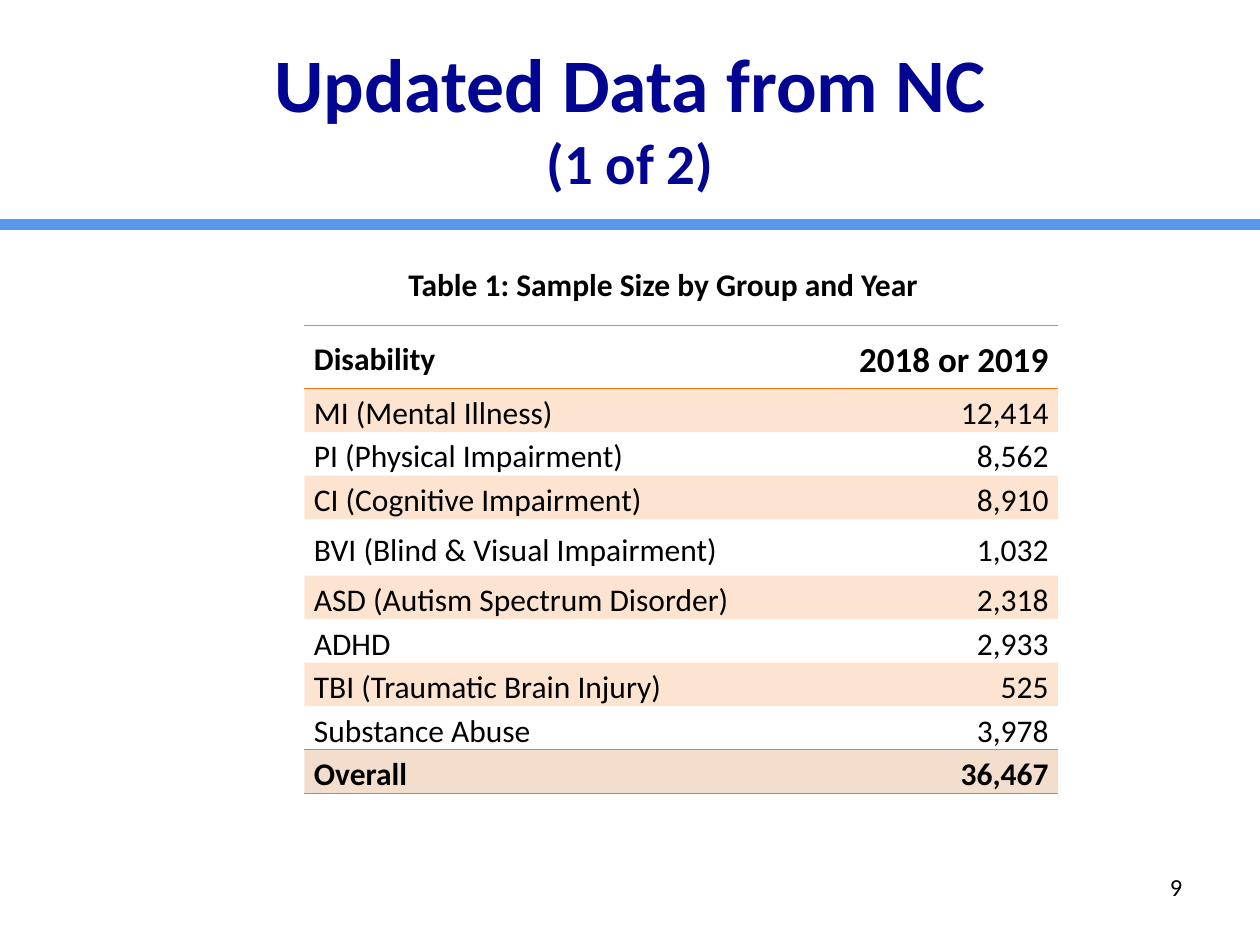
from lxml import etree
from pptx import Presentation
from pptx.dml.color import RGBColor
from pptx.enum.shapes import MSO_CONNECTOR
from pptx.enum.text import MSO_ANCHOR, MSO_AUTO_SIZE, PP_ALIGN
from pptx.oxml.ns import qn
from pptx.util import Pt

LEFT, CENTER, RIGHT = PP_ALIGN.LEFT, PP_ALIGN.CENTER, PP_ALIGN.RIGHT
TOP, MIDDLE = MSO_ANCHOR.TOP, MSO_ANCHOR.MIDDLE
STRAIGHT = MSO_CONNECTOR.STRAIGHT
TITLE_ONLY_LAYOUT = 5
PLAIN_TABLE_STYLE = "{2D5ABB26-0587-4C30-8999-92F81FD0307C}"

WIDTH, HEIGHT = 720, 540
NAVY, BLUE, BLACK, WHITE = "020592", "5799E8", "000000", "FFFFFF"
ORANGE, DARK_ORANGE, GRAY = "F97817", "C75805", "999999"

HEADER = ("Disability", "2018 or 2019")
SAMPLES = [
    ("MI (Mental Illness)", "12,414"),
    ("PI (Physical Impairment)", "8,562"),
    ("CI (Cognitive Impairment)", "8,910"),
    ("BVI (Blind & Visual Impairment)", "1,032"),
    ("ASD (Autism Spectrum Disorder)", "2,318"),
    ("ADHD", "2,933"),
    ("TBI (Traumatic Brain Injury)", "525"),
    ("Substance Abuse", "3,978"),
]
OVERALL = ("Overall", "36,467")
COLUMN_WIDTHS = (309.6, 121)
ROW_HEIGHT = 24.8
TALL_ROWS = {0: 36, 4: 32.4}


def color(value):
    return RGBColor.from_string(value)


def write(paragraph, text, size=18, ink=BLACK, bold=False, font="Calibri",
          align=LEFT, line_spacing=None, space_after=0):
    paragraph.alignment = align
    paragraph.space_after = Pt(space_after)
    if line_spacing:
        paragraph.line_spacing = line_spacing
    run = paragraph.add_run()
    run.text = text
    run.font.name = font
    run.font.size = Pt(size)
    run.font.bold = bold
    run.font.color.rgb = color(ink)


def set_border(cell, side, ink, width=1):
    """Draw one cell edge; side is lnT or lnB. Call before filling the cell."""
    properties = cell._tc.get_or_add_tcPr()
    line = etree.SubElement(properties, qn(f"a:{side}"), w=str(Pt(width)))
    fill = etree.SubElement(line, qn("a:solidFill"))
    etree.SubElement(fill, qn("a:srgbClr"), val=ink)


def set_fill(cell, ink, opacity=20):
    """Tint a cell with a part-transparent colour, or clear it."""
    if ink is None:
        cell.fill.background()
        return
    cell.fill.solid()
    cell.fill.fore_color.rgb = color(ink)
    rgb = cell._tc.tcPr.find(".//" + qn("a:solidFill") + "/" + qn("a:srgbClr")) \
        if not cell._tc.tcPr.findall(qn("a:solidFill")) \
        else cell._tc.tcPr.find(qn("a:solidFill")).find(qn("a:srgbClr"))
    etree.SubElement(rgb, qn("a:alpha"), val=str(opacity * 1000))


class SlideBuilder:
    def __init__(self, presentation):
        layout = presentation.slide_layouts[TITLE_ONLY_LAYOUT]
        self.slide = presentation.slides.add_slide(layout)

    def rule(self, y, ink, width):
        line = self.slide.shapes.add_connector(STRAIGHT, 0, Pt(y), Pt(WIDTH), Pt(y))
        line.line.color.rgb = color(ink)
        line.line.width = Pt(width)
        etree.SubElement(line._element.spPr, qn("a:effectLst"))

    def title(self, heading, part, left, top, width, height):
        title = self.slide.shapes.title
        title.left, title.top = Pt(left), Pt(top)
        title.width, title.height = Pt(width), Pt(height)
        frame = title.text_frame
        frame.auto_size = MSO_AUTO_SIZE.NONE
        frame.vertical_anchor = MIDDLE
        paragraph = frame.paragraphs[0]
        write(paragraph, heading, size=43.2, ink=NAVY, bold=True, align=CENTER)
        paragraph.add_line_break()
        write(paragraph, part, size=32.4, ink=NAVY, bold=True, align=CENTER)

    def text(self, text, left, top, width, height, anchor=TOP, **style):
        box = self.slide.shapes.add_textbox(Pt(left), Pt(top), Pt(width), Pt(height))
        frame = box.text_frame
        frame.word_wrap = True
        frame.vertical_anchor = anchor
        write(frame.paragraphs[0], text, align=CENTER, **style)

    def table(self, left, top):
        rows = [HEADER, *SAMPLES, OVERALL]
        last = len(rows) - 1
        heights = [TALL_ROWS.get(index, ROW_HEIGHT) for index in range(len(rows))]
        table = self.slide.shapes.add_table(
            len(rows), len(COLUMN_WIDTHS), Pt(left), Pt(top),
            Pt(sum(COLUMN_WIDTHS)), Pt(sum(heights))).table
        table.first_row = table.horz_banding = False
        table._tbl.tblPr.find(qn("a:tableStyleId")).text = PLAIN_TABLE_STYLE
        for column, width in zip(table.columns, COLUMN_WIDTHS):
            column.width = Pt(width)
        for row_index, values in enumerate(rows):
            table.rows[row_index].height = Pt(heights[row_index])
            is_header, is_total = row_index == 0, row_index == last
            tint = DARK_ORANGE if is_total else ORANGE if row_index % 2 else None
            for column_index, value in enumerate(values):
                cell = table.cell(row_index, column_index)
                cell.vertical_anchor = MIDDLE
                cell.margin_left = cell.margin_right = Pt(5.4)
                cell.margin_top = cell.margin_bottom = 0
                if is_header or is_total:
                    set_border(cell, "lnT", GRAY if is_header else ORANGE)
                    set_border(cell, "lnB", ORANGE)
                set_fill(cell, tint)
                write(cell.text_frame.paragraphs[0], value,
                      size=20 if is_header and column_index else 18,
                      bold=is_header or is_total,
                      align=RIGHT if column_index else LEFT, line_spacing=1.15,
                      space_after=0 if is_header and not column_index else 8)


def main():
    presentation = Presentation()
    presentation.slide_width, presentation.slide_height = Pt(WIDTH), Pt(HEIGHT)
    builder = SlideBuilder(presentation)
    builder.rule(128.2, BLUE, 7)
    builder.rule(124.6, WHITE, 0.5)
    builder.title("Updated Data from NC", "(1 of 2)", 36, 21.6, 648, 90)
    builder.text("Table 1: Sample Size by Group and Year", 198, 144.7, 362, 31,
                 bold=True, line_spacing=1.15, space_after=8)
    builder.table(174, 186)
    builder.text("9", 648, 492, 48, 29, anchor=MIDDLE, size=14)
    presentation.save("out.pptx")


if __name__ == "__main__":
    main()
